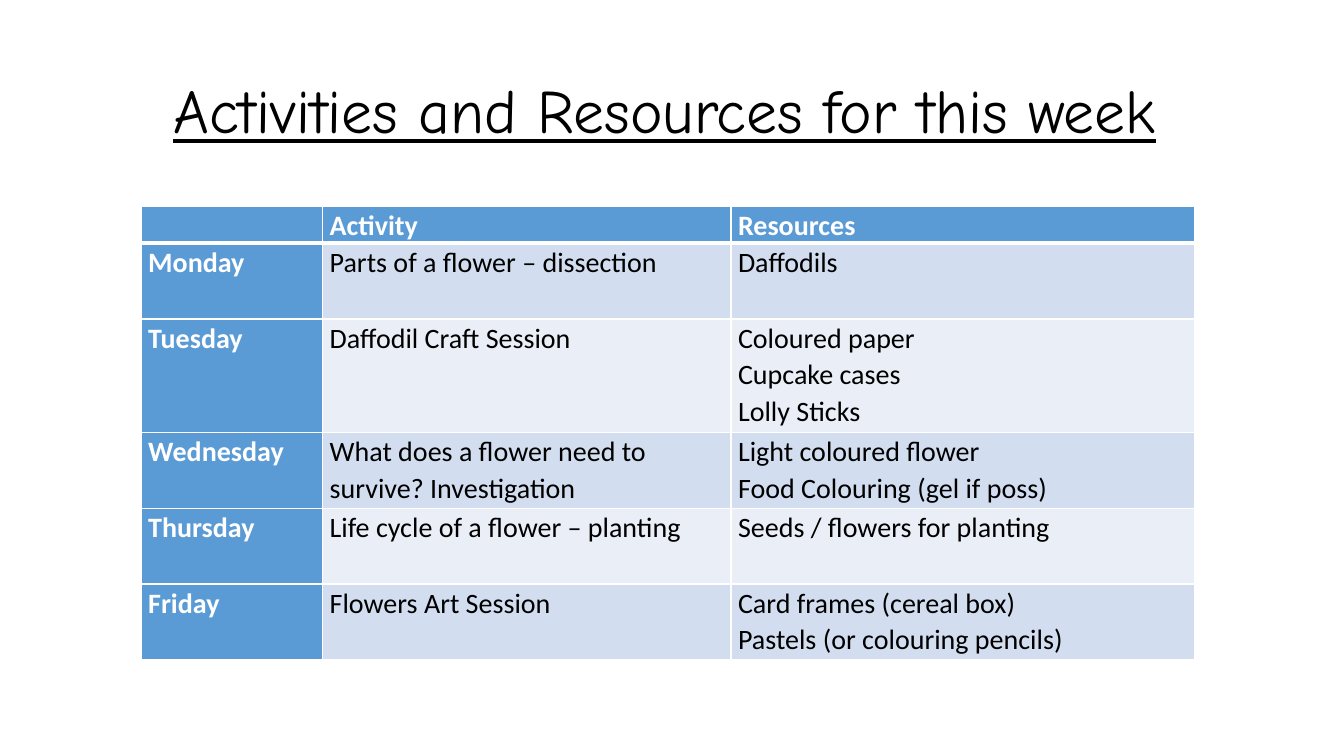
from lxml.etree import SubElement
from pptx import Presentation
from pptx.dml.color import RGBColor
from pptx.enum.text import MSO_ANCHOR as Anchor, MSO_AUTO_SIZE as AutoSize, PP_ALIGN as Align
from pptx.oxml.ns import qn
from pptx.util import Inches, Pt

BLUE, WHITE, BLACK = "5B9BD5", "FFFFFF", "000000"
BANDS = ("D2DEEF", "EAEFF7")
COLUMN_WIDTHS = (1.8, 4.05, 4.6)
ROW_HEIGHTS = (0.36, 0.75, 1.13, 0.75, 0.75, 0.75)
WEEK = (
    ("", "Activity", ("Resources",)),
    ("Monday", "Parts of a flower – dissection", ("Daffodils",)),
    ("Tuesday", "Daffodil Craft Session",
     ("Coloured paper", "Cupcake cases", "Lolly Sticks")),
    ("Wednesday", "What does a flower need to survive? Investigation",
     ("Light coloured flower", "Food Colouring (gel if poss)")),
    ("Thursday", "Life cycle of a flower – planting", ("Seeds / flowers for planting",)),
    ("Friday", "Flowers Art Session",
     ("Card frames (cereal box)", "Pastels (or colouring pencils)")),
)


def colour(hex_value):
    return RGBColor.from_string(hex_value)


class SlideBuilder:
    title_font = "Comic Neue"
    body_font = "Calibri"

    def __init__(self, slide):
        self.slide = slide

    def add_span(self, para, text, font, size, ink, bold=False, underline=False):
        span = para.add_run()
        span.text = text
        span.font.name = font
        span.font.size = Pt(size)
        span.font.color.rgb = colour(ink)
        span.font.bold = bold
        span.font.underline = underline

    def add_title(self, text, left, top, width, height):
        title = self.slide.shapes.title
        title.left, title.top = Inches(left), Inches(top)
        title.width, title.height = Inches(width), Inches(height)
        frame = title.text_frame
        frame.word_wrap = True
        frame.auto_size = AutoSize.NONE
        frame.vertical_anchor = Anchor.MIDDLE
        para = frame.paragraphs[0]
        para.alignment = Align.CENTER
        para.line_spacing = 0.9
        self.add_span(para, text, self.title_font, 44, BLACK, underline=True)

    def add_borders(self, cell, **widths):
        """Draw white cell edges; widths are points, keyed L, R, T and B."""
        properties = cell._tc.get_or_add_tcPr()
        for side, width in widths.items():
            line = SubElement(properties, qn(f"a:ln{side}"), w=str(Pt(width)))
            fill = SubElement(line, qn("a:solidFill"))
            SubElement(fill, qn("a:srgbClr"), val=WHITE)

    def fill_cell(self, cell, lines, fill, heading):
        cell.margin_left = cell.margin_right = Inches(0.07)
        cell.margin_top = cell.margin_bottom = 0
        cell.fill.solid()
        cell.fill.fore_color.rgb = colour(fill)
        frame = cell.text_frame
        for index, line in enumerate(lines):
            para = frame.add_paragraph() if index else frame.paragraphs[0]
            para.line_spacing = 1.07
            if line:
                self.add_span(para, line, self.body_font, 20,
                              WHITE if heading else BLACK, bold=heading)

    def add_timetable(self, entries, left, top):
        table = self.slide.shapes.add_table(
            len(entries), len(COLUMN_WIDTHS), Inches(left), Inches(top),
            Inches(sum(COLUMN_WIDTHS)), Inches(sum(ROW_HEIGHTS))).table
        for column, width in zip(table.columns, COLUMN_WIDTHS):
            column.width = Inches(width)
        for row, height in zip(table.rows, ROW_HEIGHTS):
            row.height = Inches(height)
        for r, (day, activity, resources) in enumerate(entries):
            for c, lines in enumerate(((day,), (activity,), resources)):
                cell = table.cell(r, c)
                heading = r == 0 or c == 0
                self.add_borders(cell, L=1, R=1, T=3 if r == 1 else 1, B=3 if r == 0 else 1)
                self.fill_cell(cell, lines, BLUE if heading else BANDS[(r - 1) % 2], heading)


def main():
    deck = Presentation()
    deck.slide_width, deck.slide_height = Inches(13.33), Inches(7.5)
    page = SlideBuilder(deck.slides.add_slide(deck.slide_layouts[5]))
    page.add_title("Activities and Resources for this week", 0.38, 0.4, 12.43, 1.45)
    page.add_timetable(WEEK, 1.4, 2.05)
    deck.save("out.pptx")


if __name__ == "__main__":
    main()
